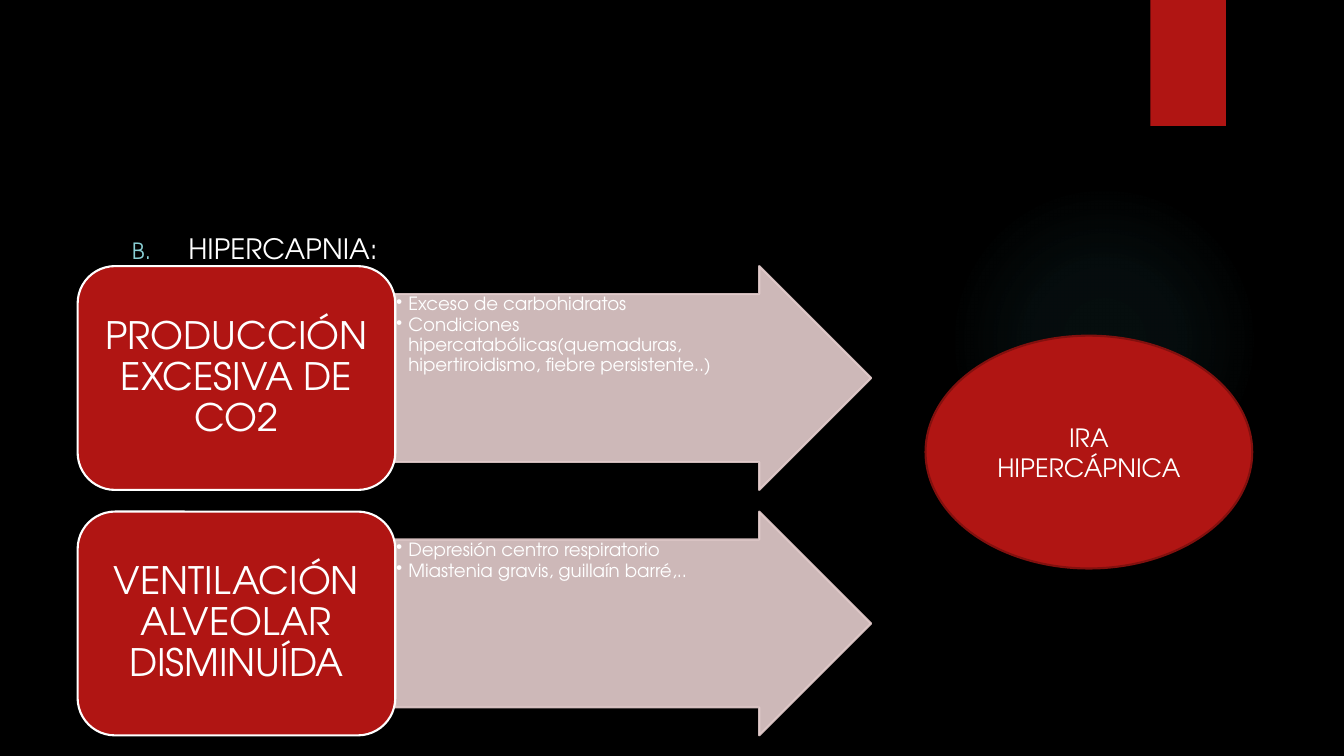
"""Build the hypercapnia slide: two causes leading to hypercapnic failure."""
from dataclasses import dataclass

from lxml.etree import SubElement
from pptx import Presentation
from pptx.dml.color import RGBColor
from pptx.enum.shapes import MSO_SHAPE
from pptx.enum.text import MSO_ANCHOR, PP_ALIGN
from pptx.oxml.ns import qn
from pptx.shapes.autoshape import Shape
from pptx.slide import Slide
from pptx.util import Inches, Pt

BLACK = RGBColor(0x00, 0x00, 0x00)
WHITE = RGBColor(0xFF, 0xFF, 0xFF)
RED = RGBColor(0xB0, 0x15, 0x13)
DARK_RED = RGBColor(0x82, 0x10, 0x0E)
PINK = RGBColor(0xE4, 0xCC, 0xCC)
TEAL = RGBColor(0x50, 0xB9, 0xC1)
AQUA = RGBColor(0x8A, 0xD0, 0xD6)
FONT = "TeX Gyre Adventor"
GLOW_STOPS = ((0, 7), (36, 6), (69, 0))
TOP, PITCH, HEIGHT = 2.64, 2.435, 2.22


@dataclass
class Cause:
    title: str
    details: list[str]


CAUSES = [
    Cause("PRODUCCIÓN EXCESIVA DE CO2",
          ["Exceso de carbohidratos",
           "Condiciones hipercatabólicas(quemaduras, hipertiroidismo, fiebre persistente..)"]),
    Cause("VENTILACIÓN ALVEOLAR DISMINUÍDA",
          ["Depresión centro respiratorio", "Miastenia gravis, guillaín barré,.."]),
]


def set_alpha(parent, percent: int) -> None:
    for clr in parent.iter(qn("a:srgbClr")):
        SubElement(clr, qn("a:alpha"), val=str(percent * 1000))


def add_shape(s: Slide, kind: MSO_SHAPE, x: float, y: float, w: float, h: float,
              fill: RGBColor, line: RGBColor | None = None) -> Shape:
    sp = s.shapes.add_shape(kind, Inches(x), Inches(y), Inches(w), Inches(h))
    sp.shadow.inherit = False
    sp.fill.solid()
    sp.fill.fore_color.rgb = fill
    if line is None:
        sp.line.fill.background()
    else:
        sp.line.color.rgb = line
        sp.line.width = Pt(1.5)
    return sp


def write(sp: Shape, lines: list[str], *, size: float, align: PP_ALIGN = PP_ALIGN.LEFT,
          anchor: MSO_ANCHOR = MSO_ANCHOR.TOP, inset: tuple[float, float] = (0.1, 0.05),
          spacing: float = 1.0, after: float = 0, indent: float = 0,
          bullet: str = "", number: int = 0) -> None:
    tf = sp.text_frame
    tf.word_wrap = True
    tf.vertical_anchor = anchor
    tf.margin_left = tf.margin_right = Inches(inset[0])
    tf.margin_top = tf.margin_bottom = Inches(inset[1])
    for i, text in enumerate(lines):
        p = tf.paragraphs[0] if i == 0 else tf.add_paragraph()
        p.alignment = align
        p.line_spacing = spacing
        p.space_after = Pt(after)
        pPr = p._p.get_or_add_pPr()
        if indent:
            pPr.set("marL", str(Inches(indent)))
            pPr.set("indent", str(-Inches(indent)))
        if number:
            clr = SubElement(pPr, qn("a:buClr"))
            SubElement(clr, qn("a:srgbClr"), val=str(AQUA))
            SubElement(pPr, qn("a:buSzPct"), val="80000")
            SubElement(pPr, qn("a:buFont"), typeface=FONT)
            SubElement(pPr, qn("a:buAutoNum"), type="alphaUcPeriod", startAt=str(number))
        elif bullet:
            SubElement(pPr, qn("a:buChar"), char=bullet)
        r = p.add_run()
        r.text = text
        r.font.name = FONT
        r.font.size = Pt(size)
        r.font.color.rgb = WHITE


def add_glow(s: Slide) -> None:
    sp = add_shape(s, MSO_SHAPE.OVAL, 9.41, 1.83, 3.08, 3.08, TEAL)
    spPr = sp._element.spPr
    solid = spPr.find(qn("a:solidFill"))
    grad = spPr.makeelement(qn("a:gradFill"), {"rotWithShape": "1"})
    stops = SubElement(grad, qn("a:gsLst"))
    for pos, alpha in GLOW_STOPS:
        gs = SubElement(stops, qn("a:gs"), pos=str(pos * 1000))
        SubElement(gs, qn("a:srgbClr"), val=str(TEAL))
        set_alpha(gs, alpha)
    circle = SubElement(grad, qn("a:path"), {"path": "circle"})
    SubElement(circle, qn("a:fillToRect"), dict.fromkeys("ltrb", "50000"))
    spPr.replace(solid, grad)


def add_cause(s: Slide, cause: Cause, y: float) -> None:
    arrow = add_shape(s, MSO_SHAPE.RIGHT_ARROW, 3.92, y, 4.72, HEIGHT, PINK, PINK)
    arrow.adjustments[0] = 0.75
    arrow.adjustments[1] = 0.5
    set_alpha(arrow._element.spPr, 90)
    write(arrow, cause.details, size=13, inset=(0.01, 0.01), spacing=0.9, after=1,
          indent=0.12, bullet="•")
    box = add_shape(s, MSO_SHAPE.ROUNDED_RECTANGLE, 0.77, y, 3.15, HEIGHT, RED, WHITE)
    write(box, [cause.title], size=27, align=PP_ALIGN.CENTER, anchor=MSO_ANCHOR.MIDDLE,
          inset=(0.11, 0.06), spacing=0.9)


def main() -> None:
    prs = Presentation()
    prs.slide_width, prs.slide_height = Inches(13.33), Inches(7.5)
    s = prs.slides.add_slide(prs.slide_layouts[6])
    s.background.fill.solid()
    s.background.fill.fore_color.rgb = BLACK
    add_glow(s)
    add_shape(s, MSO_SHAPE.RECTANGLE, 11.41, 0, 0.75, 1.25, RED)
    heading = s.shapes.add_textbox(Inches(1.21), Inches(2.25), Inches(9.78), Inches(4.59))
    write(heading, ["HIPERCAPNIA:"], size=20, indent=0.56, number=2)
    for i, cause in enumerate(CAUSES):
        add_cause(s, cause, TOP + i * PITCH)
    result = add_shape(s, MSO_SHAPE.OVAL, 9.18, 3.33, 3.24, 2.31, RED, DARK_RED)
    write(result, ["IRA HIPERCÁPNICA"], size=18, align=PP_ALIGN.CENTER,
          anchor=MSO_ANCHOR.MIDDLE)
    prs.save("out.pptx")


if __name__ == "__main__":
    main()
